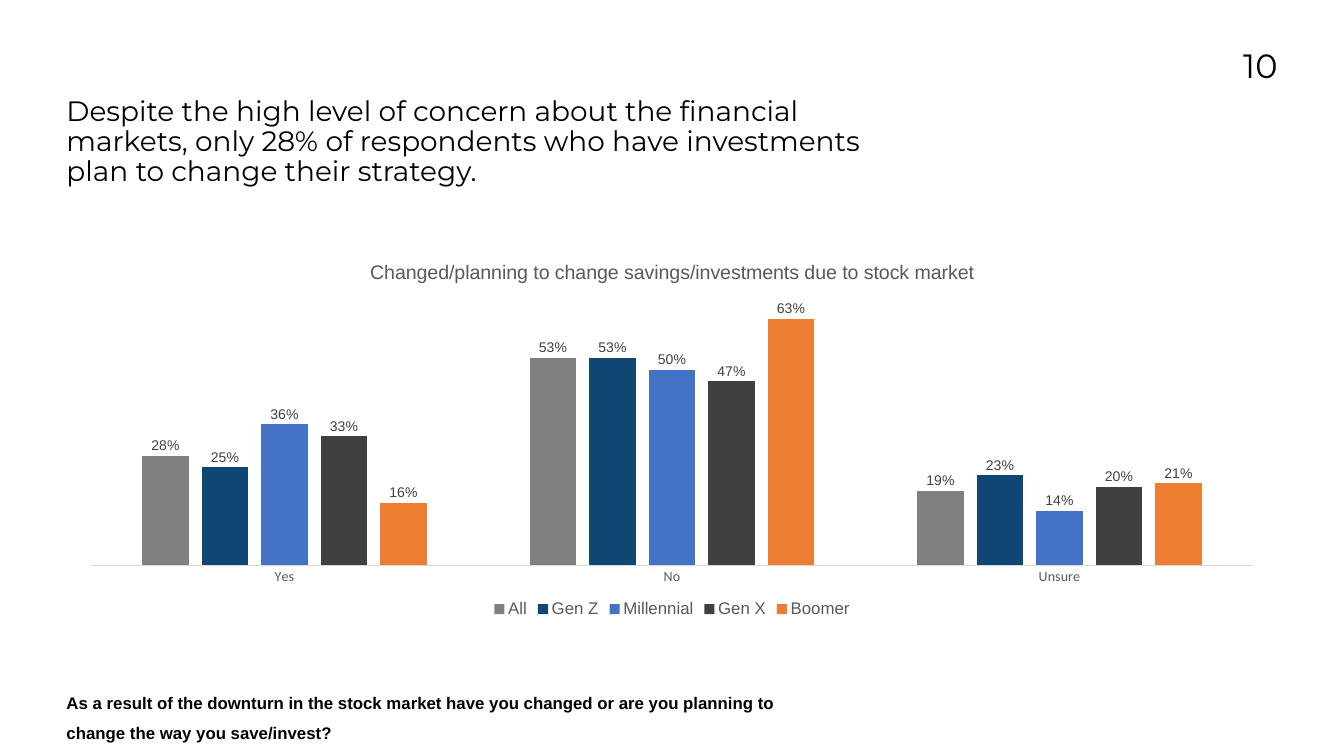
from lxml import etree
from pptx import Presentation
from pptx.chart.data import CategoryChartData
from pptx.dml.color import RGBColor
from pptx.enum import chart as kinds, text as marks
from pptx.oxml import ns
from pptx.util import Pt

BLACK = RGBColor(0, 0, 0)
GREY = RGBColor(0x59, 0x59, 0x59)
DARK = RGBColor(0x40, 0x40, 0x40)
RULE = RGBColor(0xD9, 0xD9, 0xD9)
SILVER = RGBColor(0x80, 0x80, 0x80)
NAVY = RGBColor(0x10, 0x46, 0x74)
BLUE = RGBColor(0x44, 0x72, 0xC4)
ORANGE = RGBColor(0xED, 0x7D, 0x31)

ANSWERS = ["Yes", "No", "Unsure"]
GROUPS = [
    ("All", (0.28, 0.53, 0.19), SILVER),
    ("Gen Z", (0.25, 0.53, 0.23), NAVY),
    ("Millennial", (0.36, 0.5, 0.14), BLUE),
    ("Gen X", (0.33, 0.47, 0.2), DARK),
    ("Boomer", (0.16, 0.63, 0.21), ORANGE),
]


def style(font, size, color, name="Arial", bold=False):
    font.size, font.name, font.bold = Pt(size), name, bold
    font.color.rgb = color


def add_text(slide, box, words, size, name="Montserrat", bold=False,
             align=marks.PP_ALIGN.LEFT, spacing=1.0):
    frame = slide.shapes.add_textbox(*map(Pt, box)).text_frame
    frame.word_wrap = True
    frame.margin_left = frame.margin_right = 0
    frame.margin_top = frame.margin_bottom = 0
    para = frame.paragraphs[0]
    para.alignment, para.line_spacing = align, spacing
    run = para.add_run()
    run.text = words
    style(run.font, size, BLACK, name, bold)


def place_plot(chart, **parts):
    plot = chart.plots[0]._element.getparent()
    layout = plot.find(ns.qn("c:layout"))
    if layout is None:
        layout = etree.Element(ns.qn("c:layout"))
        plot.insert(0, layout)
    manual = etree.SubElement(layout, ns.qn("c:manualLayout"))
    fields = dict(layoutTarget="inner", xMode="edge", yMode="edge", **parts)
    for tag, value in fields.items():
        etree.SubElement(manual, ns.qn("c:" + tag)).set("val", str(value))


def add_bars(slide, box):
    data = CategoryChartData(number_format="0%")
    data.categories = ANSWERS
    for name, values, _ in GROUPS:
        data.add_series(name, values)
    chart = slide.shapes.add_chart(
        kinds.XL_CHART_TYPE.COLUMN_CLUSTERED, *map(Pt, box), data).chart
    style(chart.font, 10, BLACK, "Calibri")

    chart.has_title = True
    title = chart.chart_title.text_frame
    title.text = ("Changed/planning to change savings/investments "
                  "due to stock market")
    style(title.paragraphs[0].runs[0].font, 28, GREY)

    chart.has_legend = True
    chart.legend.position = kinds.XL_LEGEND_POSITION.BOTTOM
    chart.legend.include_in_layout = False
    style(chart.legend.font, 24, GREY)

    base = chart.category_axis
    base.major_tick_mark = kinds.XL_TICK_MARK.NONE
    base.format.line.color.rgb = RULE
    base.format.line.width = Pt(0.75)
    style(base.tick_labels.font, 20, GREY, "Calibri")

    scale = chart.value_axis
    scale.minimum_scale, scale.maximum_scale = 0, 0.7
    scale.has_major_gridlines = scale.visible = False

    plot = chart.plots[0]
    plot.gap_width, plot.overlap = 219, -27
    plot.vary_by_categories = False
    for series, (_, _, color) in zip(plot.series, GROUPS):
        series.format.fill.solid()
        series.format.fill.fore_color.rgb = color
        labels = series.data_labels
        labels.show_value = True
        labels.position = kinds.XL_LABEL_POSITION.OUTSIDE_END
        labels.number_format = "0%"
        labels.number_format_is_linked = False
        style(labels.font, 20, DARK)
    place_plot(chart, x=0.02, y=0.12, w=0.96, h=0.73)


def add_header(slide, left, top, right):
    add_text(slide, (right - 162, top, 162, 118), "10", 48,
             align=marks.PP_ALIGN.RIGHT)
    add_text(slide, (left, top + 75.5, 1153, 150),
             "Despite the high level of concern about the financial markets, "
             "only 28% of respondents who have investments plan to change "
             "their strategy.", 40, spacing=0.9)


def add_footer(slide, box):
    add_text(slide, box,
             "As a result of the downturn in the stock market have you "
             "changed or are you planning to change the way you save/invest?",
             24, "Arial", True, spacing=1.5)


def main():
    deck = Presentation()
    deck.slide_width, deck.slide_height = Pt(1920), Pt(1080)
    slide = deck.slides.add_slide(deck.slide_layouts[6])
    left, right = 95, 1825
    add_header(slide, left, 63.5, right)
    add_bars(slide, (left, 351.5, right - left, 537))
    add_footer(slide, (left, 975.5, 1045.5, 47))
    deck.save("out.pptx")


if __name__ == "__main__":
    main()
